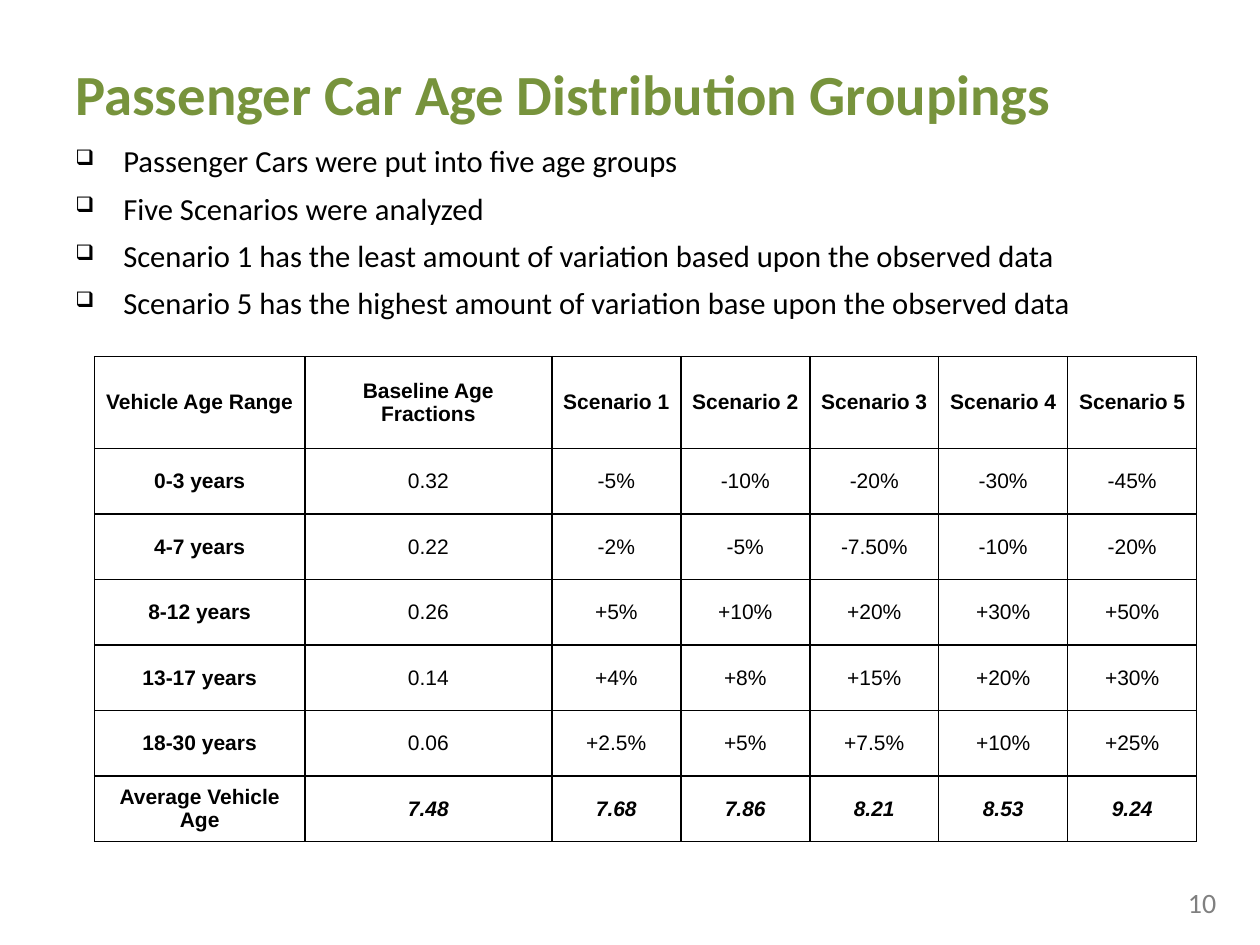
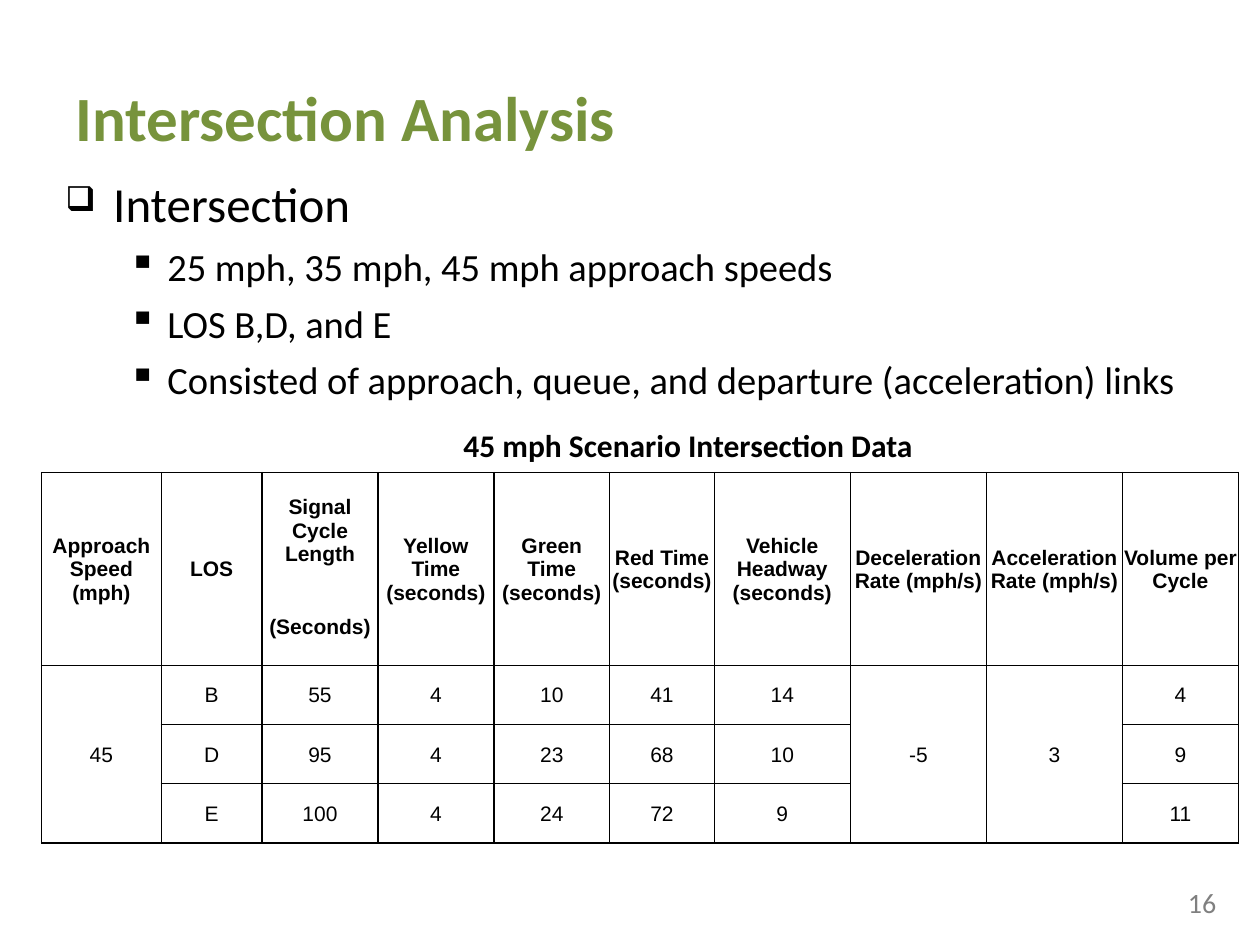
import pptx
import pptx.dml.color
import pptx.enum.text
import pptx.oxml
import pptx.oxml.ns
import pptx.util

Inches = pptx.util.Inches
Pt = pptx.util.Pt
RGBColor = pptx.dml.color.RGBColor
Align = pptx.enum.text.PP_ALIGN
Anchor = pptx.enum.text.MSO_ANCHOR

GREEN = RGBColor(0x77, 0x93, 0x3C)
GRAY = RGBColor(0x80, 0x80, 0x80)
BLACK = RGBColor(0, 0, 0)
WHITE = RGBColor(255, 255, 255)

TITLE = {"name": "Calibri", "bold": True, "color": GREEN}
PLAIN = {"name": "Calibri", "color": BLACK}
NUMBER = {"name": "Calibri", "size": Pt(16), "color": GRAY}
CELL = {"name": "Arial", "size": Pt(12), "color": BLACK}

BULLETS = [
    {"char": "❑", "scale": 70, "left": 0.38, "hang": 0.38},
    {"char": "▪", "scale": 100, "left": 0.81, "hang": 0.31},
]

AGES = [
    ["Vehicle Age Range", "Baseline Age Fractions"]
    + [f"Scenario {n}" for n in range(1, 6)],
    ["0-3 years", "0.32", "-5%", "-10%", "-20%", "-30%", "-45%"],
    ["4-7 years", "0.22", "-2%", "-5%", "-7.50%", "-10%", "-20%"],
    ["8-12 years", "0.26", "+5%", "+10%", "+20%", "+30%", "+50%"],
    ["13-17 years", "0.14", "+4%", "+8%", "+15%", "+20%", "+30%"],
    ["18-30 years", "0.06", "+2.5%", "+5%", "+7.5%", "+10%", "+25%"],
    ["Average Vehicle Age", "7.48", "7.68", "7.86", "8.21", "8.53", "9.24"],
]

SIGNALS = [
    ["Approach Speed (mph)", "LOS", "Signal Cycle Length",
     "Yellow Time (seconds)", "Green Time (seconds)", "Red Time (seconds)",
     "Vehicle Headway (seconds)", "Deceleration Rate (mph/s)",
     "Acceleration Rate (mph/s)", "Volume per Cycle"],
    ["", "", "(Seconds)", "", "", "", "", "", "", ""],
    ["45", "B", "55", "4", "10", "41", "14", "-5", "3", "4"],
    ["", "D", "95", "4", "23", "68", "10", "", "", "9"],
    ["", "E", "100", "4", "24", "72", "9", "", "", "11"],
]


def add_run(para, text, style):
    run = para.add_run()
    run.text = text
    for key, value in style.items():
        if key == "color":
            run.font.color.rgb = value
        else:
            setattr(run.font, key, value)


def add_box(slide, place, wrap=True, anchor=Anchor.TOP):
    frame = slide.shapes.add_textbox(*map(Inches, place)).text_frame
    frame.word_wrap = wrap
    frame.vertical_anchor = anchor
    return frame


def add_page(deck, title, size, height, number):
    slide = deck.slides.add_slide(deck.slide_layouts[6])
    frame = add_box(slide, (0.5, 0.3, 9, height), anchor=Anchor.MIDDLE)
    add_run(frame.paragraphs[0], title, TITLE | {"size": Pt(size)})
    frame = add_box(slide, (9.33, 6.98, 0.5, 0.37))
    add_run(frame.paragraphs[0], number, NUMBER)
    return slide


def set_bullet(para, level):
    mark = BULLETS[level]
    para.level = level
    props = para._p.get_or_add_pPr()
    props.set("marL", str(Inches(mark["left"])))
    props.set("indent", str(-Inches(mark["hang"])))
    for tag, key, value in (("buSzPct", "val", mark["scale"] * 1000),
                            ("buChar", "char", mark["char"])):
        item = pptx.oxml.parse_xml(
            f'<a:{tag} {pptx.oxml.ns.nsdecls("a")} {key}="{value}"/>')
        props.append(item)


def add_list(slide, place, items):
    frame = add_box(slide, place)
    for index, (level, size, text) in enumerate(items):
        para = frame.add_paragraph() if index else frame.paragraphs[0]
        set_bullet(para, level)
        if index:
            para.space_before = Pt(6)
        add_run(para, text, PLAIN | {"size": Pt(size)})


def set_lines(cell, blank=""):
    props = cell._tc.get_or_add_tcPr()
    for index, side in enumerate("LRTB"):
        fill = ("<a:noFill/>" if side in blank else
                f'<a:solidFill><a:srgbClr val="{BLACK}"/></a:solidFill>')
        props.insert(index, pptx.oxml.parse_xml(
            f'<a:ln{side} {pptx.oxml.ns.nsdecls("a")} w="{Pt(1)}">'
            f'{fill}</a:ln{side}>'))


def add_grid(slide, spot, cols, rows, data, pads, style, blanks={}):
    size = sum(cols), sum(rows)
    table = slide.shapes.add_table(
        len(rows), len(cols), *map(Inches, spot + size)).table
    for col, width in zip(table.columns, cols):
        col.width = Inches(width)
    for row, height in zip(table.rows, rows):
        row.height = Inches(height)
    for r, line in enumerate(data):
        for c, text in enumerate(line):
            cell = table.cell(r, c)
            cell.fill.solid()
            cell.fill.fore_color.rgb = WHITE
            cell.vertical_anchor = Anchor.MIDDLE
            for side, pad in pads.items():
                setattr(cell, f"margin_{side}", Inches(pad))
            set_lines(cell, blanks.get((r, c), ""))
            para = cell.text_frame.paragraphs[0]
            para.alignment = Align.CENTER
            if text:
                add_run(para, text, CELL | style(r, c))
    return table


def age_style(row, col):
    last = row == len(AGES) - 1
    return {"bold": row == 0 or col == 0 or last, "italic": last and col > 0}


def head_style(row, col):
    return {"bold": row < 2}


def add_ages(deck):
    slide = add_page(
        deck, "Passenger Car Age Distribution Groupings", 32.4, 0.87, "10")
    cols = [1.67, 1.96] + [(8.75 - 1.67 - 1.96) / 5] * 5
    pads = {"left": 0.07, "right": 0.07, "top": 0, "bottom": 0}
    add_grid(slide, (0.75, 2.83), cols, [0.73] + [0.52] * 6,
             AGES, pads, age_style)
    lines = [
        "Passenger Cars were put into five age groups",
        "Five Scenarios were analyzed",
        "Scenario 1 has the least amount of variation based upon the observed data",
        "Scenario 5 has the highest amount of variation base upon the observed data",
    ]
    add_list(slide, (0.5, 1.08, 9.08, 1.33),
             [(0, 17.5, line) for line in lines])


def add_signals(deck):
    slide = add_page(deck, "Intersection Analysis", 36, 1.25, "16")
    add_list(slide, (0.42, 1.33, 9.08, 2.17), [
        (0, 28, "Intersection"),
        (1, 22, "25 mph, 35 mph, 45 mph approach speeds"),
        (1, 22, "LOS B,D, and E"),
        (1, 22, "Consisted of approach, queue, and departure (acceleration) links"),
    ])
    frame = add_box(slide, (3.58, 3.33, 3.8, 0.4), wrap=False)
    add_run(frame.paragraphs[0], "45 mph Scenario Intersection Data",
            PLAIN | {"size": Pt(18), "bold": True})
    cols = [0.95, 0.8] + [0.92] * 3 + [0.83] + [1.08] * 3 + [0.92]
    pads = {"left": 0.01, "right": 0.01, "top": 0.01, "bottom": 0}
    table = add_grid(slide, (0.33, 3.75), cols, [0.92, 0.32] + [0.47] * 3,
                     SIGNALS, pads, head_style, {(0, 2): "B", (1, 2): "T"})
    for col in range(len(cols)):
        if col != 2:
            table.cell(0, col).merge(table.cell(1, col))
    for col in (0, 7, 8):
        table.cell(2, col).merge(table.cell(4, col))


def main():
    deck = pptx.Presentation()
    deck.slide_width = Inches(10)
    deck.slide_height = Inches(7.5)
    add_ages(deck)
    add_signals(deck)
    deck.save("out.pptx")


if __name__ == "__main__":
    main()
